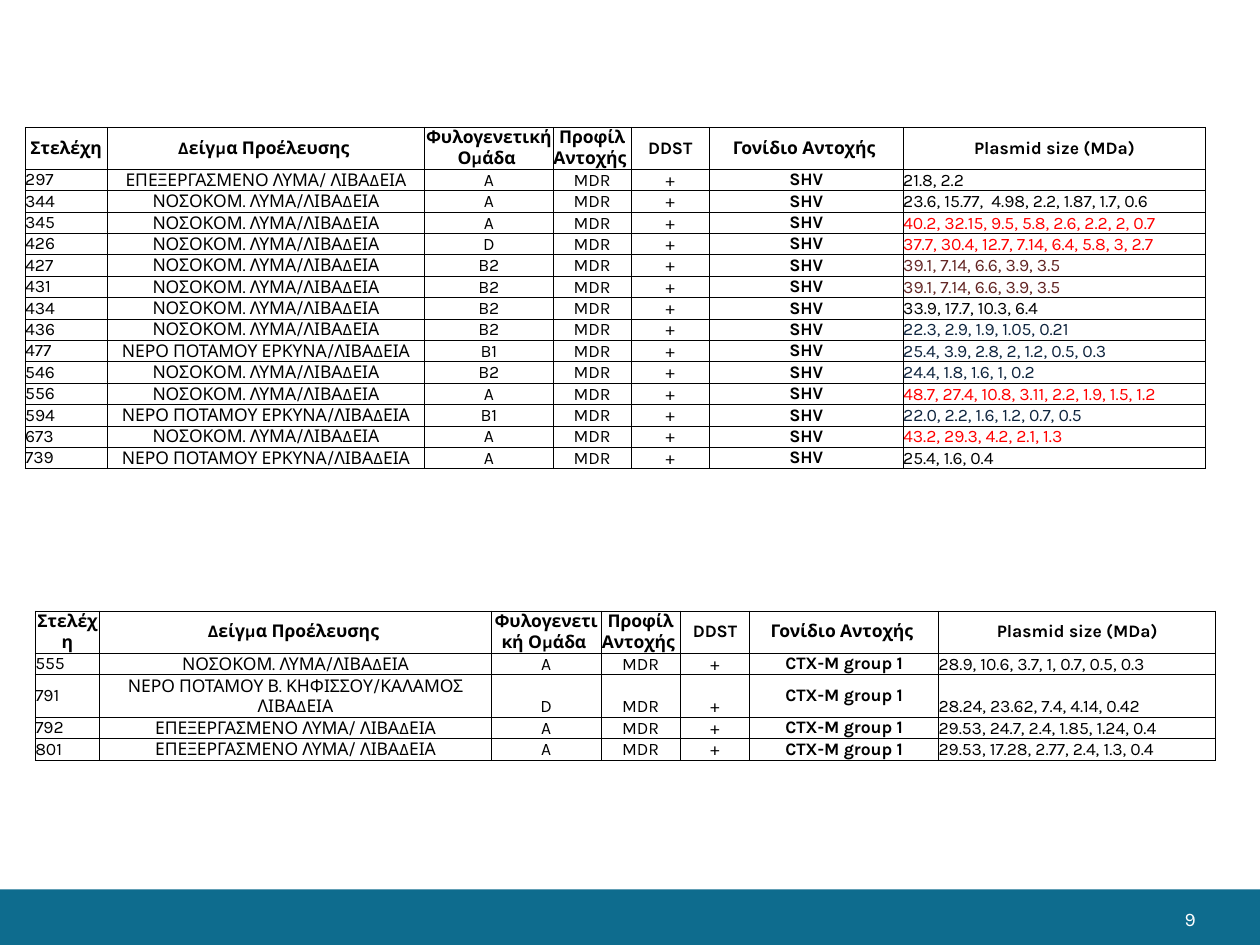
from lxml.etree import SubElement
from pptx import Presentation
from pptx.dml.color import RGBColor
from pptx.enum.shapes import MSO_SHAPE
from pptx.enum.text import MSO_ANCHOR as ANCHOR, PP_ALIGN as ALIGN
from pptx.oxml.ns import qn
from pptx.util import Inches, Pt

COLORS = {
    "black": "000000", "white": "FFFFFF", "teal": "0E6C8E",
    "red": "FF0000", "brown": "632523", "navy": "0F253F",
}
FONT = "Karla"
HEADERS = ["Στελέχη", "Δείγμα Προέλευσης ", "Φυλογενετική Ομάδα ", "Προφίλ Αντοχής ",
           "DDST", "Γονίδιο Αντοχής ", "Plasmid size (MDa)"]
STRAIN, GENE, PLASMID = 0, 5, 6
HOSPITAL = "ΝΟΣΟΚΟΜ. ΛΥΜΑ/ΛΙΒΑΔΕΙΑ"
TREATED = "ΕΠΕΞΕΡΓΑΣΜΕΝΟ ΛΥΜΑ/ ΛΙΒΑΔΕΙΑ"
ERKYNA = "ΝΕΡΟ ΠΟΤΑΜΟΥ ΕΡΚΥΝΑ/ΛΙΒΑΔΕΙΑ"
KIFISSOS = "ΝΕΡΟ ΠΟΤΑΜΟΥ Β. ΚΗΦΙΣΣΟΥ/ΚΑΛΑΜΟΣ ΛΙΒΑΔΕΙΑ"

SHV_STRAINS = [
    ("297", TREATED, "A", "21.8, 2.2", "black"),
    ("344", HOSPITAL, "A", "23.6, 15.77,  4.98, 2.2, 1.87, 1.7, 0.6", "black"),
    ("345", HOSPITAL, "A", "40.2, 32.15, 9.5, 5.8, 2.6, 2.2, 2, 0.7", "red"),
    ("426", HOSPITAL, "D", "37.7, 30.4, 12.7, 7.14, 6.4, 5.8, 3, 2.7", "red"),
    ("427", HOSPITAL, "B2", "39.1, 7.14, 6.6, 3.9, 3.5", "brown"),
    ("431", HOSPITAL, "B2", "39.1, 7.14, 6.6, 3.9, 3.5", "brown"),
    ("434", HOSPITAL, "B2", "33.9, 17.7, 10.3, 6.4", "black"),
    ("436", HOSPITAL, "B2", "22.3, 2.9, 1.9, 1.05, 0.21", "navy"),
    ("477", ERKYNA, "B1", "25.4, 3.9, 2.8, 2, 1.2, 0.5, 0.3", "navy"),
    ("546", HOSPITAL, "B2", "24.4, 1.8, 1.6, 1, 0.2", "navy"),
    ("556", HOSPITAL, "A", "48.7, 27.4, 10.8, 3.11, 2.2, 1.9, 1.5, 1.2", "red"),
    ("594", ERKYNA, "B1", "22.0, 2.2, 1.6, 1.2, 0.7, 0.5", "navy"),
    ("673", HOSPITAL, "A", "43.2, 29.3, 4.2, 2.1, 1.3", "red"),
    ("739", ERKYNA, "A", "25.4, 1.6, 0.4", "black"),
]
CTX_STRAINS = [
    ("555", HOSPITAL, "A", "28.9, 10.6, 3.7, 1, 0.7, 0.5, 0.3", "black"),
    ("791", KIFISSOS, "D", "28.24, 23.62, 7.4, 4.14, 0.42", "black"),
    ("792", TREATED, "A", "29.53, 24.7, 2.4, 1.85, 1.24, 0.4", "black"),
    ("801", TREATED, "A", "29.53, 17.28, 2.77, 2.4, 1.3, 0.4", "black"),
]


def rgb(name):
    return RGBColor.from_string(COLORS[name])


def write(tf, text, align, color="black", size=10, bold=False):
    p = tf.paragraphs[0]
    p.alignment = align
    r = p.add_run()
    r.text = text
    for key, value in {"name": FONT, "size": Pt(size), "bold": bold}.items():
        setattr(r.font, key, value)
    r.font.color.rgb = rgb(color)


def add_borders(cell):
    tc_pr = cell._tc.get_or_add_tcPr()
    for side in ("lnL", "lnR", "lnT", "lnB"):
        ln = SubElement(tc_pr, qn(f"a:{side}"), w=str(Pt(0.5)))
        SubElement(SubElement(ln, qn("a:solidFill")), qn("a:srgbClr"), val=COLORS["black"])


def format_cell(cell, anchor):
    for side in ("left", "right", "top", "bottom"):
        setattr(cell, f"margin_{side}", 0)
    cell.vertical_anchor = anchor
    add_borders(cell)
    cell.fill.solid()
    cell.fill.fore_color.rgb = rgb("white")


def add_strain_table(s, left, top, widths, gene, strains):
    heights = [0.33] + [0.34 if origin == KIFISSOS else 0.17 for _, origin, *_ in strains]
    table = s.shapes.add_table(len(heights), len(widths), Inches(left), Inches(top),
                               Inches(sum(widths)), Inches(sum(heights))).table
    for column, width in zip(table.columns, widths):
        column.width = Inches(width)
    for row, height in zip(table.rows, heights):
        row.height = Inches(height)

    for col, header in enumerate(HEADERS):
        cell = table.cell(0, col)
        format_cell(cell, ANCHOR.MIDDLE)
        write(cell.text_frame, header, ALIGN.CENTER, bold=True)

    for row, (strain, origin, group, plasmids, color) in enumerate(strains, 1):
        for col, text in enumerate((strain, origin, group, "MDR", "+", gene, plasmids)):
            cell = table.cell(row, col)
            format_cell(cell, ANCHOR.MIDDLE if col in (STRAIN, GENE) else ANCHOR.BOTTOM)
            write(cell.text_frame, text,
                  ALIGN.LEFT if col in (STRAIN, PLASMID) else ALIGN.CENTER,
                  color if col == PLASMID else "black", bold=col == GENE)


def add_footer(s, number):
    bar = s.shapes.add_shape(MSO_SHAPE.RECTANGLE, 0, Inches(7.06), Inches(10), Inches(0.44))
    bar.shadow.inherit = False
    bar.fill.solid()
    bar.fill.fore_color.rgb = rgb("teal")
    bar.line.fill.background()

    box = s.shapes.add_textbox(Inches(7.31), Inches(7.06), Inches(2.25), Inches(0.46))
    tf = box.text_frame
    layout = {"word_wrap": True, "vertical_anchor": ANCHOR.MIDDLE,
              "margin_left": Inches(0.07), "margin_right": Inches(0.07),
              "margin_top": Inches(0.04), "margin_bottom": Inches(0.04)}
    for key, value in layout.items():
        setattr(tf, key, value)
    write(tf, number, ALIGN.RIGHT, "white", 11)


def main():
    """Build the slide of resistant strains and their plasmid sizes."""
    prs = Presentation()
    prs.slide_width, prs.slide_height = Inches(10), Inches(7.5)
    s = prs.slides.add_slide(prs.slide_layouts[6])
    add_footer(s, "9")
    add_strain_table(s, 0.2, 1.01, [0.65, 2.52, 1.02, 0.62, 0.62, 1.54, 2.4], "SHV", SHV_STRAINS)
    add_strain_table(s, 0.28, 4.85, [0.51, 3.11, 0.87, 0.63, 0.55, 1.5, 2.2],
                     "CTX-M group 1", CTX_STRAINS)
    prs.save("out.pptx")


if __name__ == "__main__":
    main()
